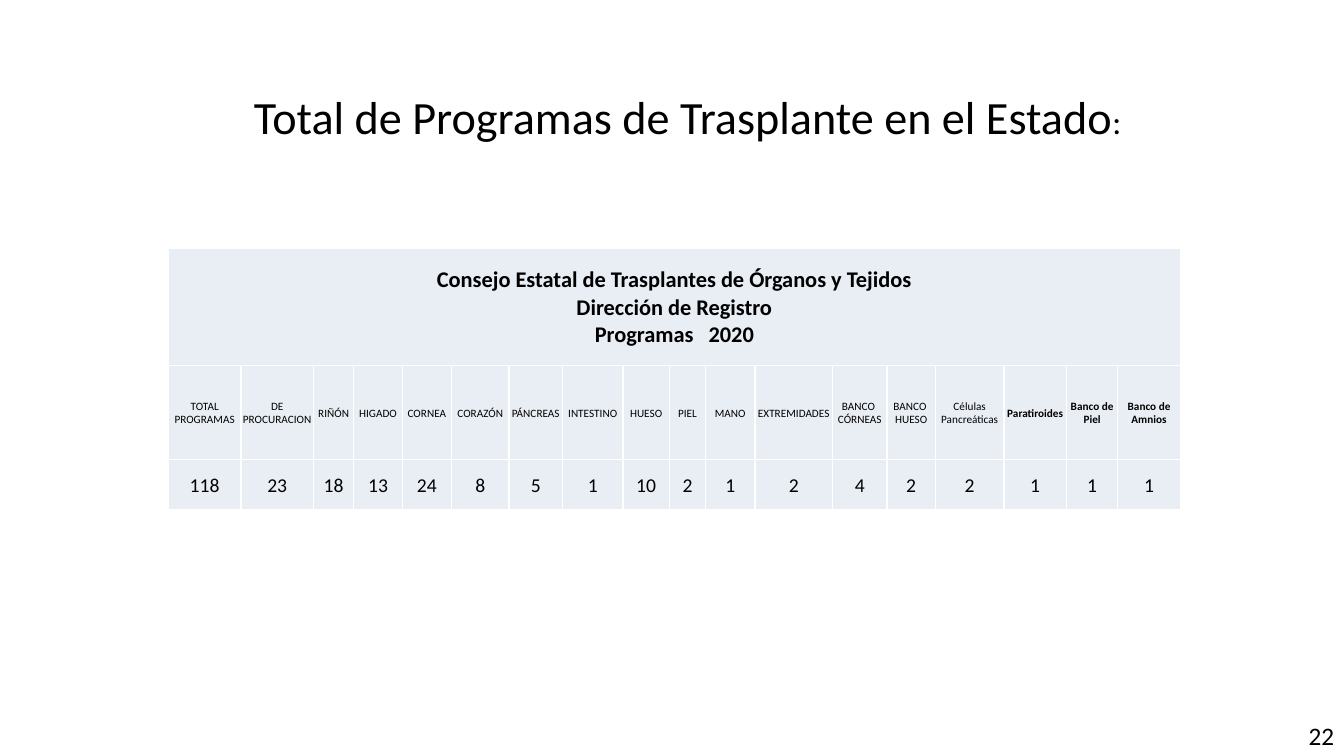
from lxml import etree
from pptx import Presentation
from pptx.dml.color import RGBColor
from pptx.enum.text import MSO_ANCHOR as Anchor, MSO_AUTO_SIZE as AutoSize, PP_ALIGN as Align
from pptx.oxml.ns import qn
from pptx.util import Emu, Pt

PX = 9144
FONT = "Calibri"
BLACK, WHITE, CELL_FILL = "000000", "FFFFFF", "E9EDF4"

HEADING = [
    "Consejo Estatal de Trasplantes de Órganos y Tejidos",
    "Dirección de Registro",
    "Programas   2020",
]
PROGRAMS = [
    ("TOTAL PROGRAMAS", 118, 72), ("DE PROCURACION", 23, 72), ("RIÑÓN", 18, 40),
    ("HIGADO", 13, 48), ("CORNEA", 24, 49), ("CORAZÓN", 8, 57),
    ("PÁNCREAS", 5, 53), ("INTESTINO", 1, 60), ("HUESO", 10, 46),
    ("PIEL", 2, 36), ("MANO", 1, 49), ("EXTREMIDADES", 2, 77),
    ("BANCO  CÓRNEAS", 4, 54), ("BANCO  HUESO", 2, 48), ("Células Pancreáticas", 2, 68),
    ("Paratiroides", 1, 62), ("Banco de Piel", 1, 51), ("Banco de Amnios", 1, 62),
]
BOLD_PROGRAMS = {"Paratiroides", "Banco de Piel", "Banco de Amnios"}
ROW_HEIGHTS = [117, 93, 50]


def px(length):
    return Emu(length * PX)


def color(hex_string):
    return RGBColor.from_string(hex_string)


def add_run(paragraph, text, size, bold=False):
    run = paragraph.add_run()
    run.text = text
    run.font.name = FONT
    run.font.size = Pt(size)
    run.font.bold = bold
    run.font.color.rgb = color(BLACK)


def place_title(slide, left, top, width, height):
    title = slide.shapes.title
    title.left, title.top, title.width, title.height = map(px, (left, top, width, height))
    frame = title.text_frame
    frame.auto_size = AutoSize.NONE
    frame.vertical_anchor = Anchor.MIDDLE
    paragraph = frame.paragraphs[0]
    paragraph.alignment = Align.CENTER
    paragraph.line_spacing = 0.8
    add_run(paragraph, "Total de Programas de Trasplante en el Estado", 33)
    add_run(paragraph, ":", 24)


def format_cell(cell):
    properties = cell._tc.get_or_add_tcPr()
    for side in ("a:lnL", "a:lnR", "a:lnT", "a:lnB"):
        line = etree.SubElement(properties, qn(side), w=str(Pt(1)))
        fill = etree.SubElement(line, qn("a:solidFill"))
        etree.SubElement(fill, qn("a:srgbClr"), val=WHITE)
    cell.fill.solid()
    cell.fill.fore_color.rgb = color(CELL_FILL)
    cell.vertical_anchor = Anchor.MIDDLE
    cell.margin_left = cell.margin_right = cell.margin_top = px(1)
    cell.margin_bottom = 0
    paragraph = cell.text_frame.paragraphs[0]
    paragraph.alignment = Align.CENTER
    return paragraph


def add_program_table(slide, left, top, width, height):
    frame = slide.shapes.add_table(
        len(ROW_HEIGHTS), len(PROGRAMS), px(left), px(top), px(width), px(height))
    table = frame.table
    table.first_row = table.horz_banding = False
    for row, row_height in zip(table.rows, ROW_HEIGHTS):
        row.height = px(row_height)
    table.cell(0, 0).merge(table.cell(0, len(PROGRAMS) - 1))
    for index, (name, count, column_width) in enumerate(PROGRAMS):
        table.columns[index].width = px(column_width)
        heading, label, value = [
            format_cell(table.cell(row, index)) for row in range(len(ROW_HEIGHTS))]
        if index == 0:
            for number, text in enumerate(HEADING):
                if number:
                    heading.add_line_break()
                add_run(heading, text, 16, True)
        add_run(label, name, 8, name in BOLD_PROGRAMS)
        add_run(value, str(count), 14)


def add_page_number(slide, left, top, width, height):
    box = slide.shapes.add_textbox(*map(px, (left, top, width, height)))
    frame = box.text_frame
    frame.word_wrap = True
    frame.vertical_anchor = Anchor.MIDDLE
    paragraph = frame.paragraphs[0]
    paragraph.alignment = Align.RIGHT
    add_run(paragraph, "22", 18)


def main():
    presentation = Presentation()
    presentation.slide_width, presentation.slide_height = px(1333), px(750)
    slide = presentation.slides.add_slide(presentation.slide_layouts.get_by_name("Title Only"))
    place_title(slide, 198, 92, 968, 56)
    add_program_table(slide, 167, 246, sum(width for _, _, width in PROGRAMS), sum(ROW_HEIGHTS))
    add_page_number(slide, 1022, 710, 311, 40)
    presentation.save("out.pptx")


if __name__ == "__main__":
    main()
